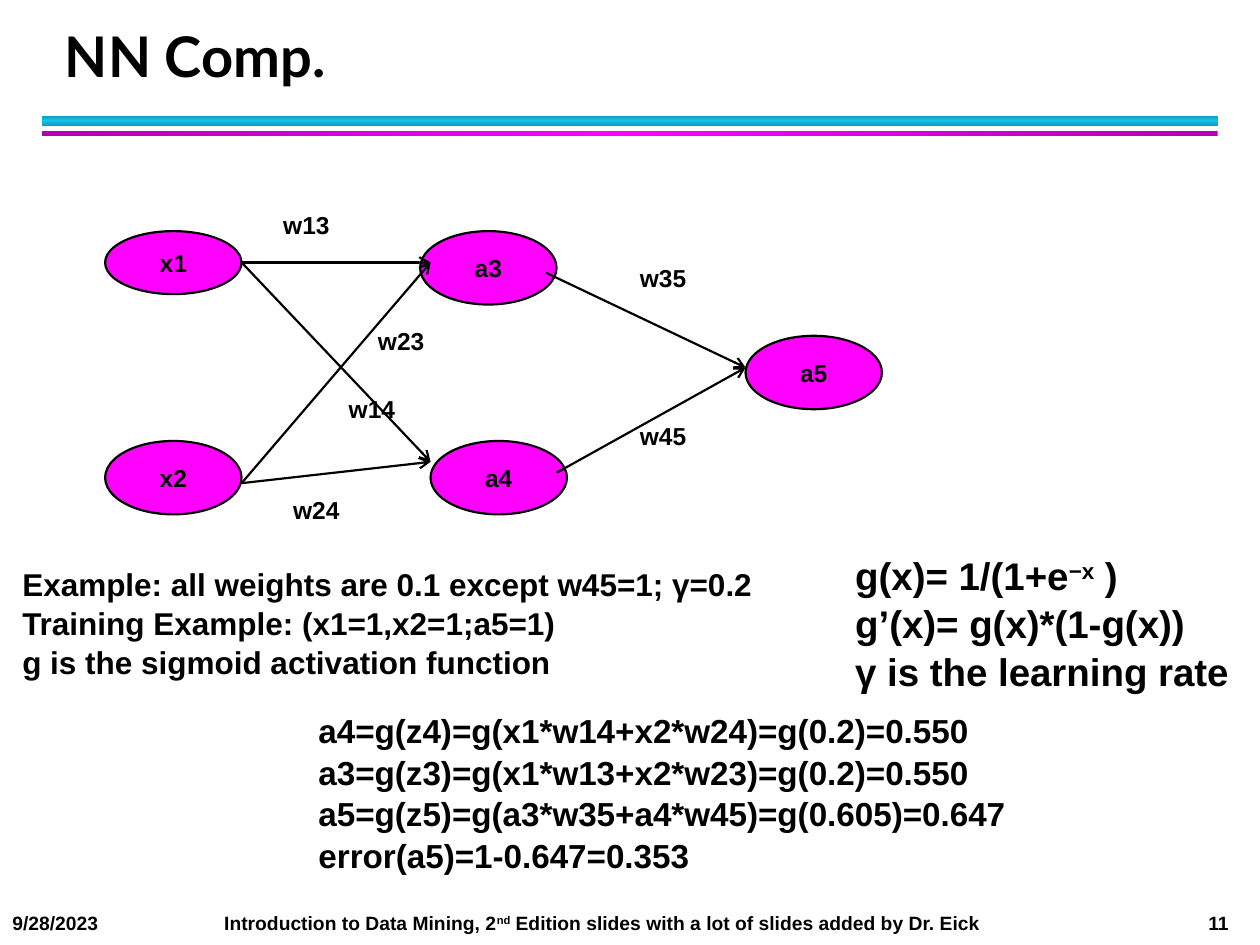
"""Build the slide that works through a small neural network computation."""
import copy
from dataclasses import dataclass

import pptx
import pptx.dml.color
import pptx.enum.shapes
import pptx.enum.text
import pptx.oxml.ns
import pptx.slide
import pptx.text.text
import pptx.util
from lxml import etree

Cm = pptx.util.Cm
Pt = pptx.util.Pt
PP_ALIGN = pptx.enum.text.PP_ALIGN
SHAPES = pptx.enum.shapes.MSO_SHAPE
ANCHOR = pptx.enum.text.MSO_ANCHOR

BLACK = "000000"
MAGENTA = "FF00FF"
NODE_WIDTH = 2.75
LABEL_SIZE = 14


@dataclass
class Node:
    name: str
    left: float
    top: float
    height: float = 1.48


@dataclass
class Edge:
    start: tuple[float, float]
    end: tuple[float, float]
    weight: str
    label_at: tuple[float, float]


@dataclass
class TextBlock:
    lines: list[list[str]]
    left: float
    top: float
    width: float
    height: float
    size: float
    font: str = "Arial"
    align: PP_ALIGN = PP_ALIGN.LEFT
    anchor: ANCHOR = ANCHOR.TOP
    spacing: float | pptx.util.Length = 1.0


@dataclass
class Bar:
    top: float
    height: float
    edge: str
    middle: str
    angle: int


X1_OUT, X2_OUT = (4.87, 5.29), (4.87, 9.74)
A3_IN, A4_IN, A5_IN = (8.68, 5.29), (8.68, 9.31), (15.03, 7.41)
A3_OUT, A4_OUT = (11.01, 5.5), (11.22, 9.53)

BARS = [
    Bar(2.33, 0.21, "0E9BBA", "12C2E9", 90),
    Bar(2.64, 0.11, "B200B2", MAGENTA, 0),
]
NODES = [
    Node("x1", 2.12, 4.66, 1.27),
    Node("x2", 2.12, 8.89),
    Node("a3", 8.47, 4.66),
    Node("a4", 8.68, 8.89),
    Node("a5", 15.03, 6.77),
]
EDGES = [
    Edge(X1_OUT, A3_IN, "w13", (5.46, 4.11)),
    Edge(X1_OUT, A4_IN, "w14", (6.78, 7.82)),
    Edge(X2_OUT, A3_IN, "w23", (7.37, 6.45)),
    Edge(X2_OUT, A4_IN, "w24", (5.66, 9.86)),
    Edge(A3_OUT, A5_IN, "w35", (12.65, 5.18)),
    Edge(A4_OUT, A5_IN, "w45", (12.65, 8.36)),
]
BLOCKS = [
    TextBlock([["NN Comp."]], 1.06, 0.43, 23.02, 1.48, 32, "Lato",
              anchor=ANCHOR.BOTTOM, spacing=Pt(36)),
    TextBlock([["a4=g(z4)=g(x1*w14+x2*w24)=g(0.2)=0.550"],
               ["a3=g(z3)=g(x1*w13+x2*w23)=g(0.2)=0.550"],
               ["a5=g(z5)=g(a3*w35+a4*w45)=g(0.605)=0.647"],
               ["error(a5)=1-0.647=0.353"]],
              6.17, 14.17, 14.58, 3.51, 19, spacing=1.04),
    TextBlock([["Example: all weights are 0.1 except w45=1; γ=0.2"],
               ["Training Example: (x1=1,x2=1;a5=1)"],
               ["g is the sigmoid activation function"]],
              0.2, 11.23, 15.44, 2.57, 18, spacing=1.04),
    TextBlock([["g(x)= 1/(1+e", "^−x", " )"],
               ["g’(x)= g(x)*(1-g(x))"],
               ["γ is the learning rate"]],
              16.99, 10.97, 8.3, 3.07, 22, spacing=1.04),
    TextBlock([["9/28/2023"]], 0, 18.24, 4, 0.7, 11),
    TextBlock([["Introduction to Data Mining, 2", "^nd",
                " Edition slides with a lot of slides added by Dr. Eick"]],
              4.27, 18.24, 16.5, 0.7, 11),
    TextBlock([["11"]], 23, 18.24, 2.02, 0.7, 11, align=PP_ALIGN.RIGHT),
]


def rgb(value: str) -> pptx.dml.color.RGBColor:
    return pptx.dml.color.RGBColor.from_string(value)


def add_run(paragraph: pptx.text.text._Paragraph, text: str, size: float, font: str) -> None:
    run = paragraph.add_run()
    run.text = text.removeprefix("^")
    run.font.size = Pt(size)
    run.font.name = font
    run.font.bold = True
    run.font.color.rgb = rgb(BLACK)
    if text.startswith("^"):
        run._r.get_or_add_rPr().set("baseline", "30000")


def draw_block(slide: pptx.slide.Slide, block: TextBlock) -> None:
    box = slide.shapes.add_textbox(Cm(block.left), Cm(block.top), Cm(block.width), Cm(block.height))
    frame = box.text_frame
    frame.word_wrap = True
    frame.vertical_anchor = block.anchor
    for index, line in enumerate(block.lines):
        paragraph = frame.add_paragraph() if index else frame.paragraphs[0]
        paragraph.alignment = block.align
        paragraph.line_spacing = block.spacing
        for text in line:
            add_run(paragraph, text, block.size, block.font)


def draw_bar(slide: pptx.slide.Slide, bar: Bar) -> None:
    stripe = slide.shapes.add_shape(SHAPES.RECTANGLE, Cm(0.85), Cm(bar.top), Cm(23.7), Cm(bar.height))
    stripe.shadow.inherit = False
    stripe.line.fill.background()
    stripe.fill.gradient()
    stripe.fill.gradient_angle = bar.angle
    first = stripe.fill.gradient_stops[0]._gs
    first.addnext(copy.deepcopy(first))
    for stop, position, color in zip(stripe.fill.gradient_stops, (0, 0.5, 1), (bar.edge, bar.middle, bar.edge)):
        stop.position = position
        stop.color.rgb = rgb(color)


def draw_node(slide: pptx.slide.Slide, node: Node) -> None:
    oval = slide.shapes.add_shape(SHAPES.OVAL, Cm(node.left), Cm(node.top), Cm(NODE_WIDTH), Cm(node.height))
    oval.shadow.inherit = False
    oval.fill.solid()
    oval.fill.fore_color.rgb = rgb(MAGENTA)
    oval.line.color.rgb = rgb(BLACK)
    oval.line.width = Pt(1.25)
    oval.text_frame.word_wrap = False
    oval.text_frame.vertical_anchor = ANCHOR.MIDDLE
    paragraph = oval.text_frame.paragraphs[0]
    paragraph.alignment = PP_ALIGN.CENTER
    add_run(paragraph, node.name, LABEL_SIZE, "Arial")


def draw_edge(slide: pptx.slide.Slide, edge: Edge) -> None:
    arrow = slide.shapes.add_connector(
        pptx.enum.shapes.MSO_CONNECTOR.STRAIGHT, *map(Cm, edge.start + edge.end))
    arrow.line.color.rgb = rgb(BLACK)
    arrow.line.width = Pt(1.25)
    qn = pptx.oxml.ns.qn
    etree.SubElement(arrow.line._get_or_add_ln(), qn("a:tailEnd"), type="arrow")
    etree.SubElement(arrow._element.spPr, qn("a:effectLst"))


def main() -> None:
    deck = pptx.Presentation()
    deck.slide_width, deck.slide_height = Cm(25.4), Cm(19.05)
    slide = deck.slides.add_slide(deck.slide_layouts[6])
    for bar in BARS:
        draw_bar(slide, bar)
    for node in NODES:
        draw_node(slide, node)
    for edge in EDGES:
        draw_edge(slide, edge)
    for edge in EDGES:
        draw_block(slide, TextBlock([[edge.weight]], *edge.label_at, 1.6, 1.02, LABEL_SIZE))
    for block in BLOCKS:
        draw_block(slide, block)
    deck.save("out.pptx")


if __name__ == "__main__":
    main()
